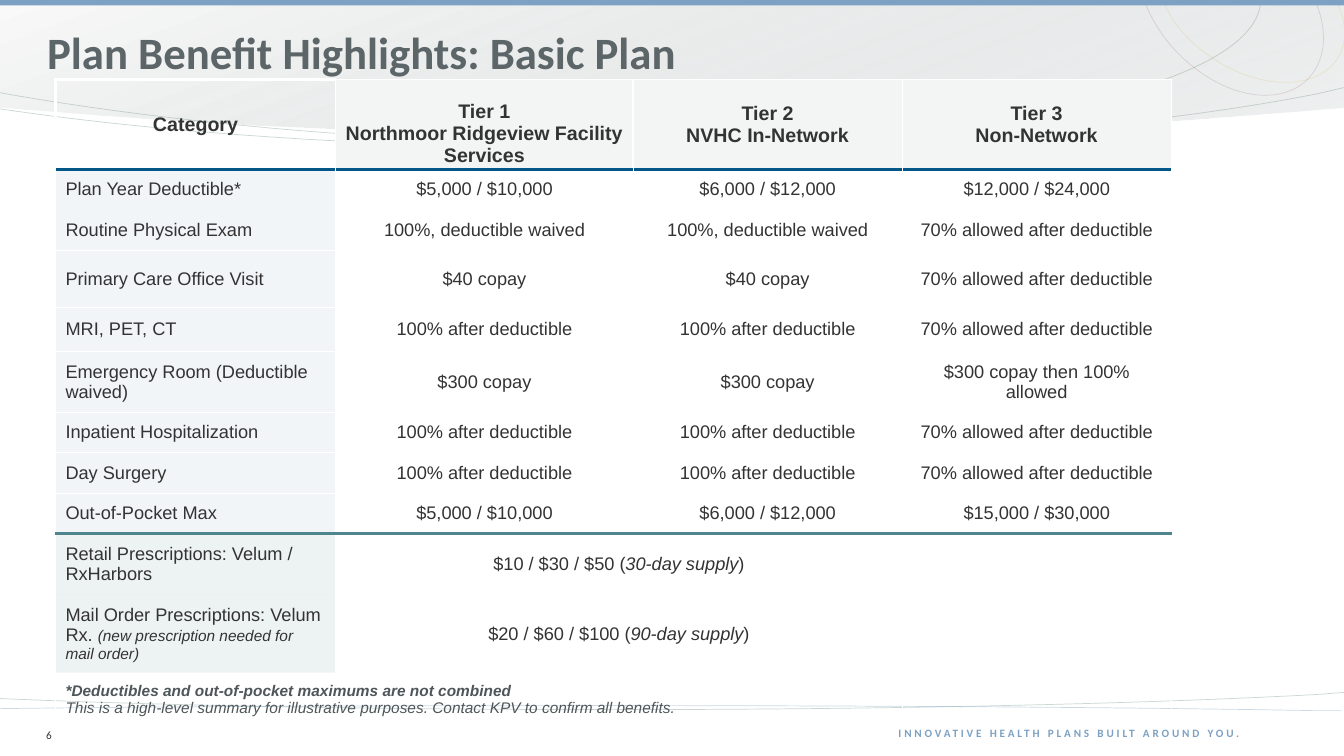
"""Build the plan benefit slide with its tier table."""
import pptx
import pptx.dml.color
import pptx.enum.shapes
import pptx.enum.text
import pptx.oxml
import pptx.oxml.ns
import pptx.util
from lxml import etree

Pt = pptx.util.Pt
RGB = pptx.dml.color.RGBColor
ALIGN = pptx.enum.text.PP_ALIGN
MIDDLE = pptx.enum.text.MSO_ANCHOR.MIDDLE
qn = pptx.oxml.ns.qn

WHITE = RGB(0xFF, 0xFF, 0xFF)
PALE = RGB(0xF9, 0xFA, 0xF9)
SILVER = RGB(0xC1, 0xC6, 0xC8)
BLUE = RGB(0x7D, 0xA1, 0xC3)
GOLD = RGB(0xD2, 0x9F, 0x12)
SAGE = RGB(0x7F, 0x9C, 0x90)
PLUM = RGB(0x6F, 0x26, 0x3C)
SLATE = RGB(0x5C, 0x65, 0x68)
NOTE = RGB(0x4E, 0x56, 0x59)
INK = RGB(0x33, 0x33, 0x33)
MIST = RGB(0xF3, 0xF4, 0xF4)
NAVY = RGB(0x00, 0x56, 0x86)
TEAL = RGB(0x4F, 0x86, 0x8E)

BAND = [(0, 0), (960, 0), (960, 76.3), (942.5, 77.8),
        (800.6, 90, 643.7, 96.5, 480.2, 96.5),
        (316, 96.5, 159.8, 90, 17.3, 77.8), (0, 76.3)]
CURVES = [
    (GOLD, 15, [(954.7, 0.7), (961.9, 15.8, 962.6, 30.2, 955.4, 41.8),
                (941, 64.1, 901.4, 64.8, 867.6, 42.5),
                (849.6, 31, 836.6, 15.8, 830.9, 0.7)]),
    (SAGE, 40, [(900.7, 0), (897.8, 74.2, 619.2, 118.1, 279.4, 97.9),
                (183.6, 92.2, 92.9, 82.1, 12.2, 68.4), (0, 66.2)]),
    (SAGE, 40, [(960, 62.6), (941, 67),
                (821.5, 90.7, 640.1, 105.8, 437.8, 105.8),
                (269.3, 105.8, 115.9, 95, 0, 77.8)]),
    (PLUM, 15, [(939.6, 0.7), (946.8, 18, 947.5, 35.3, 940.3, 48.2),
                (925.9, 74.2, 887.8, 74.9, 853.9, 49),
                (836.6, 36, 823.7, 18, 817.2, 0)]),
    (SAGE, 40, [(960, 494.6), (941, 496.1),
                (821.5, 502.6, 640.1, 506.9, 437.8, 506.9),
                (269.3, 506.9, 115.9, 504, 0, 499)]),
    (BLUE, 40, [(958.3, 507.6), (938.9, 507.6),
                (819.4, 505.4, 638.6, 504, 436.3, 504),
                (267.8, 504, 113.8, 504.7, -1.4, 506.2)]),
]

FULL = "100% after deductible"
PART = "70% allowed after deductible"
WAIVED = "100%, deductible waived"
HEADS = [["Category"],
         ["Tier 1", "Northmoor Ridgeview Facility Services"],
         ["Tier 2", "NVHC In-Network"],
         ["Tier 3", "Non-Network"]]
ROWS = [
    ["Plan Year Deductible*", "$5,000 / $10,000", "$6,000 / $12,000", "$12,000 / $24,000"],
    ["Routine Physical Exam", WAIVED, WAIVED, PART],
    ["Primary Care Office Visit", "$40 copay", "$40 copay", PART],
    ["MRI, PET, CT", FULL, FULL, PART],
    ["Emergency Room (Deductible waived)", "$300 copay", "$300 copay",
     "$300 copay then 100% allowed"],
    ["Inpatient Hospitalization", FULL, FULL, PART],
    ["Day Surgery", FULL, FULL, PART],
    ["Out-of-Pocket Max", "$5,000 / $10,000", "$6,000 / $12,000", "$15,000 / $30,000"],
    ["Retail Prescriptions: Velum / RxHarbors", "$10 / $30 / $50 (|30-day supply|)"],
    ["Mail Order Prescriptions: Velum Rx. |(new prescription needed for mail order)",
     "$20 / $60 / $100 (|90-day supply|)"],
]
NOTES = ["*Deductibles and out-of-pocket maximums are not combined",
         "This is a high-level summary for illustrative purposes. "
         "Contact KPV to confirm all benefits."]
WIDTHS = [200.2, 212.4, 192.2, 192.2]
HEIGHTS = [62.9, 28.9, 28.9, 41, 31.4, 43.6, 28.9, 28.9, 28.9, 43.6, 55.7, 38.2]


class Page:
    """Hold the slide style and draw each kind of element."""

    def __init__(self, slide):
        self.shapes = slide.shapes
        self.face = "Calibri"
        self.body = "Arial"

    def fade(self, root, share):
        color = list(root.iter(qn("a:srgbClr")))[-1]
        etree.SubElement(color, qn("a:alpha")).set("val", str(share * 1000))

    def trace(self, steps, close=False):
        spots = [steps[0]]
        for step in steps[1:]:
            if len(step) == 2:
                spots.append(step)
                continue
            ends = [spots[-1], step[:2], step[2:4], step[4:]]
            for i in range(1, 33):
                t = i / 32
                parts = ((1 - t) ** 3, 3 * t * (1 - t) ** 2, 3 * t * t * (1 - t), t ** 3)
                spots.append(tuple(sum(w * p[k] for w, p in zip(parts, ends))
                                   for k in (0, 1)))
        dots = [(Pt(x), Pt(y)) for x, y in spots]
        pen = self.shapes.build_freeform(*dots[0])
        pen.add_line_segments(dots[1:], close=close)
        shape = pen.convert_to_shape()
        shape.shadow.inherit = False
        self.bend(shape, steps, close)
        return shape

    def bend(self, shape, steps, close):
        route = next(shape.element.iter(qn("a:path")))
        for part in list(route):
            route.remove(part)
        for i, step in enumerate(steps):
            kind = "cubicBezTo" if len(step) == 6 else "lnTo" if i else "moveTo"
            part = etree.SubElement(route, qn("a:" + kind))
            for x, y in zip(step[::2], step[1::2]):
                etree.SubElement(part, qn("a:pt"), x=str(Pt(x) - shape.left),
                                 y=str(Pt(y) - shape.top))
        if close:
            etree.SubElement(route, qn("a:close"))

    def band(self, steps):
        shape = self.trace(steps, True)
        shape.line.fill.background()
        shape.fill.gradient()
        shape.fill.gradient_angle = 290
        for stop, color, spot in zip(shape.fill.gradient_stops, (PALE, SILVER), (0, 1)):
            stop.color.rgb = color
            stop.position = spot
        self.fade(shape.element, 24)

    def curve(self, color, share, steps):
        shape = self.trace(steps)
        shape.fill.background()
        shape.line.color.rgb = color
        shape.line.width = Pt(0.5)
        self.fade(shape.element, share)

    def bar(self, box, color):
        kind = pptx.enum.shapes.MSO_SHAPE.RECTANGLE
        shape = self.shapes.add_shape(kind, *map(Pt, box))
        shape.shadow.inherit = False
        shape.fill.solid()
        shape.fill.fore_color.rgb = color
        shape.line.fill.background()

    def style(self, par, face, size, color, bold=False, align=ALIGN.LEFT):
        par.alignment = align
        par.font.name = face
        par.font.size = Pt(size)
        par.font.bold = bold
        par.font.color.rgb = color

    def text(self, box, words, size, color, bold=False, align=ALIGN.LEFT, gap=0, pitch=1.0):
        frame = self.shapes.add_textbox(*map(Pt, box)).text_frame
        frame.word_wrap = True
        frame.vertical_anchor = MIDDLE
        par = frame.paragraphs[0]
        par.line_spacing = pitch
        run = par.add_run()
        run.text = words
        self.style(par, self.face, size, color, bold, align)
        if gap:
            run.font.bold = bold
            run._r.get_or_add_rPr().set("spc", str(gap * 100))

    def cell(self, cell, lines, size, bold, align, side, rise):
        cell.vertical_anchor = MIDDLE
        cell.margin_left = cell.margin_right = Pt(side)
        cell.margin_top = cell.margin_bottom = Pt(rise)
        for i, line in enumerate(lines):
            frame = cell.text_frame
            par = frame.add_paragraph() if i else frame.paragraphs[0]
            for k, words in enumerate(line.split("|")):
                run = par.add_run()
                run.text = words
                if k % 2:
                    run.font.italic = True
                    if words.startswith("(new"):
                        run.font.size = Pt(11)
            self.style(par, self.body, size, INK, bold, align)

    def edge(self, cell, sides):
        props = cell._tc.get_or_add_tcPr()
        for i, (side, (color, width)) in enumerate(sides.items()):
            line = etree.Element(qn("a:ln" + side), w=str(Pt(width)))
            fill = etree.SubElement(line, qn("a:solidFill" if color else "a:noFill"))
            if color:
                etree.SubElement(fill, qn("a:srgbClr")).set("val", str(color))
            props.insert(i, line)

    def paint(self, cell, row, col):
        tint = None
        if row == 0 and col:
            tint = MIST
        elif 0 < row < 11 and col == 0:
            tint = BLUE if row < 9 else TEAL
        if tint is None:
            cell.fill.background()
        else:
            cell.fill.solid()
            cell.fill.fore_color.rgb = tint
            if row:
                self.fade(cell._tc, 10)
        thin = (WHITE, 0.75 if row else 1)
        thick = (WHITE, 2.25) if row == col == 0 else thin
        bare = (None, 0)
        rules = {1: (NAVY, 2.25), 2: bare, 9: (TEAL, 2.25), 10: bare, 11: bare}
        self.edge(cell, {"L": thick, "R": thin, "T": rules.get(row, thick),
                         "B": rules.get(row + 1, thin)})

    def table(self, left, top):
        grid = self.shapes.add_table(len(HEIGHTS), len(WIDTHS), Pt(left), Pt(top),
                                     Pt(sum(WIDTHS)), Pt(sum(HEIGHTS))).table
        grid.first_row = grid.horz_banding = False
        for col, width in zip(grid.columns, WIDTHS):
            col.width = Pt(width)
        for row, height in zip(grid.rows, HEIGHTS):
            row.height = Pt(height)
        for c, lines in enumerate(HEADS):
            self.cell(grid.cell(0, c), lines, 14, True, ALIGN.CENTER, 0, 0)
        grid.cell(0, 1).margin_top = Pt(13.4)
        for r, items in enumerate(ROWS, 1):
            for c, words in enumerate(items):
                align = ALIGN.CENTER if c else ALIGN.LEFT
                self.cell(grid.cell(r, c), [words], 13, False, align, 7.2, 5.6)
        self.cell(grid.cell(11, 0), NOTES, 11, False, ALIGN.LEFT, 7.2, 5.6)
        for i, par in enumerate(grid.cell(11, 0).text_frame.paragraphs):
            par.font.color.rgb = NOTE
            par.font.italic = True
            par.font.bold = i == 0
        for r in range(len(HEIGHTS)):
            for c in range(len(WIDTHS)):
                self.paint(grid.cell(r, c), r, c)
        for r, first in ((9, 1), (10, 1), (11, 0)):
            grid.cell(r, first).merge(grid.cell(r, 2))


def main():
    deck = pptx.Presentation()
    deck.slide_width, deck.slide_height = Pt(960), Pt(540)
    page = Page(deck.slides.add_slide(deck.slide_layouts[6]))
    page.band(BAND)
    for color, share, steps in CURVES:
        page.curve(color, share, steps)
    page.bar((0, 0, 960, 3.9), BLUE)
    page.text((311, 514.8, 581.8, 17.3), "INNOVATIVE HEALTH PLANS BUILT AROUND YOU.",
              8, BLUE, True, ALIGN.RIGHT, 2)
    page.text((26.6, 16.6, 860.4, 45.4), "Plan Benefit Highlights: Basic Plan",
              32, SLATE, True, pitch=0.9)
    page.text((25.9, 516.2, 54, 18), "6", 8, INK)
    page.table(39.6, 57)
    deck.save("out.pptx")


if __name__ == "__main__":
    main()
